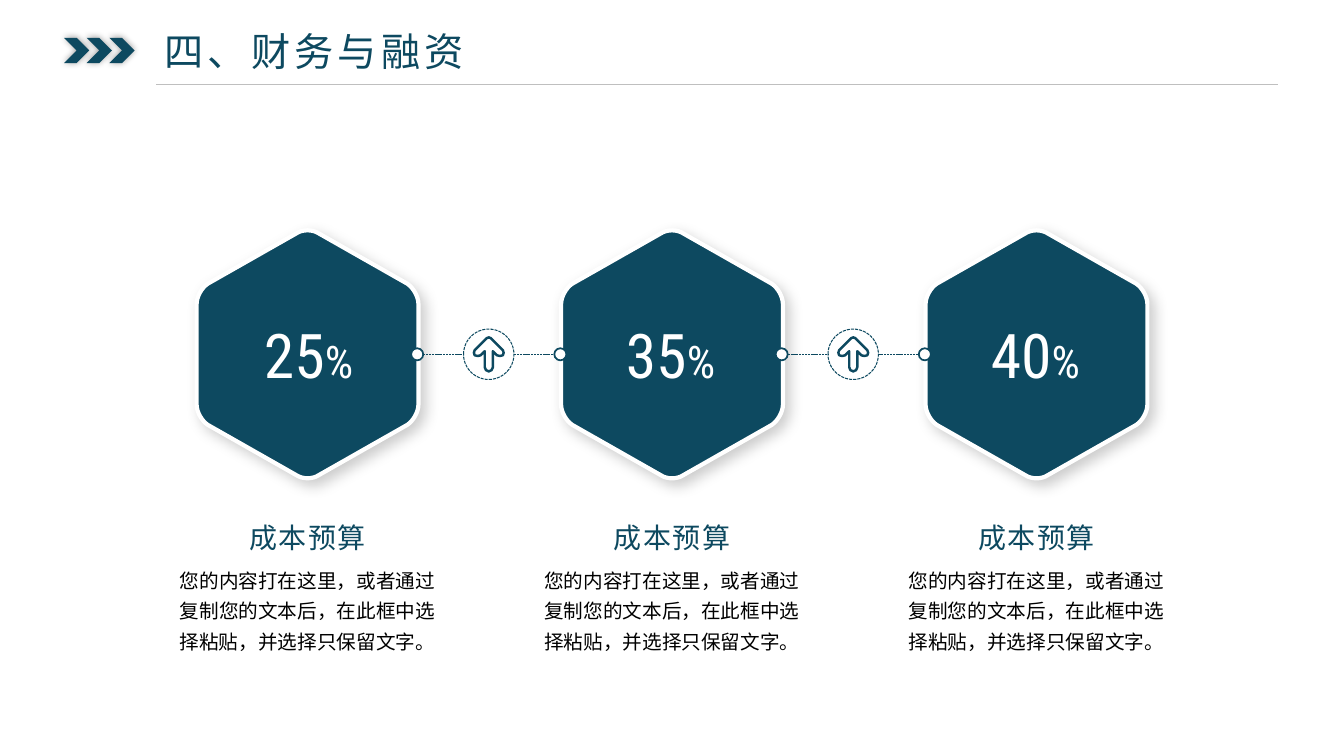
from dataclasses import dataclass
from typing import Optional

from pptx import Presentation
from pptx.dml.color import RGBColor
from pptx.enum.dml import MSO_LINE
from pptx.enum.shapes import MSO_CONNECTOR, MSO_SHAPE
from pptx.enum.text import MSO_ANCHOR, MSO_AUTO_SIZE, PP_ALIGN
from pptx.oxml.ns import qn
from pptx.oxml.xmlchemy import OxmlElement
from pptx.util import Inches, Pt

TEAL = RGBColor(0x0D, 0x49, 0x60)
WHITE = RGBColor(0xFF, 0xFF, 0xFF)
BLACK = RGBColor(0x00, 0x00, 0x00)
GREY = RGBColor(0xBF, 0xBF, 0xBF)

HEADING_FONT = "Noto Sans CJK JP"
BODY_FONT = "Noto Sans CJK SC"
NUMBER_FONT = "Roboto Condensed"

FIRST_X = 3.05
PITCH = 7.23 / 2
MID_Y = 7.03 / 2

Point = tuple[float, float]
Curve = list[Point]


@dataclass
class Stroke:
    color: RGBColor
    width: float
    dashed: bool = False


@dataclass
class Shadow:
    alpha: int
    blur: float
    distance: float = 0
    angle: int = 0


@dataclass
class TextStyle:
    size: float
    font: str
    color: RGBColor
    spacing: float = 0


@dataclass
class Budget:
    share: str
    share_left: float
    heading: str = "成本预算"
    body: str = "您的内容打在这里，或者通过复制您的文本后，在此框中选择粘贴，并选择只保留文字。"


BUDGETS = [Budget("25", 2.25), Budget("35", 5.84), Budget("40", 9.46)]

TITLE_STYLE = TextStyle(28, HEADING_FONT, TEAL, 3)
HEADING_STYLE = TextStyle(20, HEADING_FONT, TEAL, 1)
BODY_STYLE = TextStyle(14, BODY_FONT, BLACK)
SHARE_STYLE = TextStyle(44, NUMBER_FONT, WHITE)
PERCENT_STYLE = TextStyle(32, NUMBER_FONT, WHITE)

HEX_SIDE: list[Curve] = [
    [(-0.11, -1.2), (-0.05, -1.24), (0.05, -1.24), (0.11, -1.2)],
    [(0.99, -0.7), (1.05, -0.66), (1.1, -0.57), (1.1, -0.5)],
    [(1.1, 0.5), (1.1, 0.57), (1.05, 0.66), (0.99, 0.7)],
]
HEXAGON = HEX_SIDE + [[(-x, -y) for x, y in curve] for curve in HEX_SIDE]

ARROW_TIP: Curve = [(-0.02, -0.16), (-0.01, -0.17), (0.01, -0.17), (0.02, -0.16)]
ARROW_SIDE: list[Curve] = [
    [(0.14, -0.04), (0.15, -0.03), (0.15, 0), (0.14, 0.01),
     (0.12, 0.02), (0.1, 0.02), (0.08, 0.01)],
    [(0.04, -0.03)],
]
ARROW_FOOT: Curve = [(0.04, 0.13), (0.04, 0.15), (0.02, 0.17), (0, 0.17),
                     (-0.02, 0.17), (-0.04, 0.15), (-0.04, 0.13)]
ARROW = [ARROW_TIP, *ARROW_SIDE, ARROW_FOOT,
         *([(-x, y) for x, y in reversed(curve)] for curve in reversed(ARROW_SIDE))]


def set_stroke(line, stroke: Stroke) -> None:
    line.color.rgb = stroke.color
    line.width = Pt(stroke.width)
    if stroke.dashed:
        line.dash_style = MSO_LINE.SQUARE_DOT


def format_shape(sp, fill: Optional[RGBColor], stroke: Optional[Stroke],
                 shadow: Optional[Shadow] = None) -> None:
    if fill is None:
        sp.fill.background()
    else:
        sp.fill.solid()
        sp.fill.fore_color.rgb = fill
    if stroke is None:
        sp.line.fill.background()
    else:
        set_stroke(sp.line, stroke)
    sp.shadow.inherit = False
    if shadow:
        outer = OxmlElement("a:outerShdw")
        values = {"blurRad": Pt(shadow.blur), "dist": Pt(shadow.distance),
                  "dir": shadow.angle * 60000, "algn": "ctr", "rotWithShape": 0}
        for name, value in values.items():
            outer.set(name, str(value))
        color = OxmlElement("a:srgbClr")
        color.set("val", str(BLACK))
        alpha = OxmlElement("a:alpha")
        alpha.set("val", str(shadow.alpha * 1000))
        color.append(alpha)
        outer.append(color)
        sp._element.spPr.find(qn("a:effectLst")).append(outer)


def add_preset(shapes, kind: MSO_SHAPE, center: Point, size: float, fill: Optional[RGBColor],
               stroke: Optional[Stroke], shadow: Optional[Shadow] = None) -> None:
    x, y = center
    sp = shapes.add_shape(kind, Inches(x - size / 2), Inches(y - size / 2),
                          Inches(size), Inches(size))
    format_shape(sp, fill, stroke, shadow)


def add_outline(shapes, outline: list[Curve], center: Point, fill: Optional[RGBColor],
                stroke: Stroke, shadow: Optional[Shadow] = None) -> None:
    points = [(Inches(center[0] + y), Inches(center[1] - x)) for curve in outline for x, y in curve]
    builder = shapes.build_freeform(*points[0])
    builder.add_line_segments(points[1:], close=True)
    sp = builder.convert_to_shape()
    sp.rotation = 90
    path = next(sp._element.iter(qn("a:path")))
    steps = list(path)
    first = 0
    for curve in outline:
        for start in range(first + 1, first + len(curve), 3):
            bezier = OxmlElement("a:cubicBezTo")
            steps[start].addprevious(bezier)
            for step in steps[start:start + 3]:
                bezier.append(step[0])
                path.remove(step)
        first += len(curve)
    format_shape(sp, fill, stroke, shadow)


def add_line(shapes, x1: float, x2: float, y: float, stroke: Stroke) -> None:
    cx = shapes.add_connector(MSO_CONNECTOR.STRAIGHT, Inches(x1), Inches(y),
                              Inches(x2), Inches(y))
    set_stroke(cx.line, stroke)
    cx._element.spPr.append(OxmlElement("a:effectLst"))


def add_run(p, text: str, style: TextStyle) -> None:
    r = p.add_run()
    r.text = text
    for name, value in {"size": Pt(style.size), "name": style.font}.items():
        setattr(r.font, name, value)
    r.font.color.rgb = style.color
    props = r._r.get_or_add_rPr()
    east_asian = OxmlElement("a:ea")
    east_asian.set("typeface", style.font)
    props.append(east_asian)
    if style.spacing:
        props.set("spc", str(round(style.spacing * 100)))


def add_text(shapes, left: float, top: float, width: float, height: float,
             runs: list[tuple[str, TextStyle]], line_spacing: Optional[float] = None) -> None:
    tf = shapes.add_textbox(Inches(left), Inches(top), Inches(width), Inches(height)).text_frame
    tf.word_wrap = True
    tf.auto_size = MSO_AUTO_SIZE.SHAPE_TO_FIT_TEXT
    p = tf.paragraphs[0]
    for name, value in {"alignment": PP_ALIGN.CENTER, "line_spacing": line_spacing}.items():
        setattr(p, name, value)
    for text, style in runs:
        add_run(p, text, style)


def add_title(sp, text: str) -> None:
    place = {"left": 1.55, "top": 0.23, "width": 5.8, "height": 0.55}
    for name, value in place.items():
        setattr(sp, name, Inches(value))
    tf = sp.text_frame
    frame = {"margin_left": Inches(0.08), "margin_right": Inches(0.08),
             "margin_top": Inches(0.04), "margin_bottom": Inches(0.04), "word_wrap": True,
             "auto_size": MSO_AUTO_SIZE.SHAPE_TO_FIT_TEXT, "vertical_anchor": MSO_ANCHOR.TOP}
    for name, value in frame.items():
        setattr(tf, name, value)
    tf.paragraphs[0].alignment = PP_ALIGN.LEFT
    add_run(tf.paragraphs[0], text, TITLE_STYLE)


def add_link(shapes, x: float) -> None:
    for x1, x2 in [(x + 0.25, x + 0.65), (x - 0.65, x - 0.25)]:
        add_line(shapes, x1, x2, MID_Y, Stroke(TEAL, 0.5, True))
    add_preset(shapes, MSO_SHAPE.OVAL, (x, MID_Y), 0.5, None, Stroke(TEAL, 0.75, True))
    add_outline(shapes, ARROW, (x, MID_Y), None, Stroke(TEAL, 1.75))
    for dot_x in (x - 0.71, x + 0.71):
        add_preset(shapes, MSO_SHAPE.OVAL, (dot_x, MID_Y), 0.12, WHITE, Stroke(TEAL, 1.25))


def main() -> None:
    prs = Presentation()
    prs.slide_width, prs.slide_height = Inches(13.33), Inches(7.5)
    slide = prs.slides.add_slide(prs.slide_layouts[5])
    shapes = slide.shapes
    add_title(shapes.title, "四、财务与融资")
    chevrons = shapes.add_group_shape().shapes
    for i in range(3):
        add_preset(chevrons, MSO_SHAPE.CHEVRON, (0.76 + i * 0.225, 0.5), 0.25, TEAL, None,
                   Shadow(40, 5))
    add_line(shapes, 1.55, 12.68, 0.84, Stroke(GREY, 0.5))

    centers = [FIRST_X + i * PITCH for i in range(len(BUDGETS))]
    for x in centers:
        add_outline(shapes, HEXAGON, (x, MID_Y), TEAL, Stroke(WHITE, 3), Shadow(20, 10, 5, 45))
    for x in centers[:-1]:
        add_link(shapes.add_group_shape().shapes, x + PITCH / 2 - 0.01)
    for x, budget in zip(centers, BUDGETS):
        add_text(shapes, budget.share_left, 3.09, 1.62, 0.84,
                 [(budget.share, SHARE_STYLE), ("%", PERCENT_STYLE)])
        caption = shapes.add_group_shape().shapes
        add_text(caption, x - 2.82 / 2, 5.52, 2.82, 0.99, [(budget.body, BODY_STYLE)], 1.3)
        add_text(caption, x - 2.63 / 2, 5.11, 2.63, 0.44, [(budget.heading, HEADING_STYLE)])
    prs.save("out.pptx")


if __name__ == "__main__":
    main()
